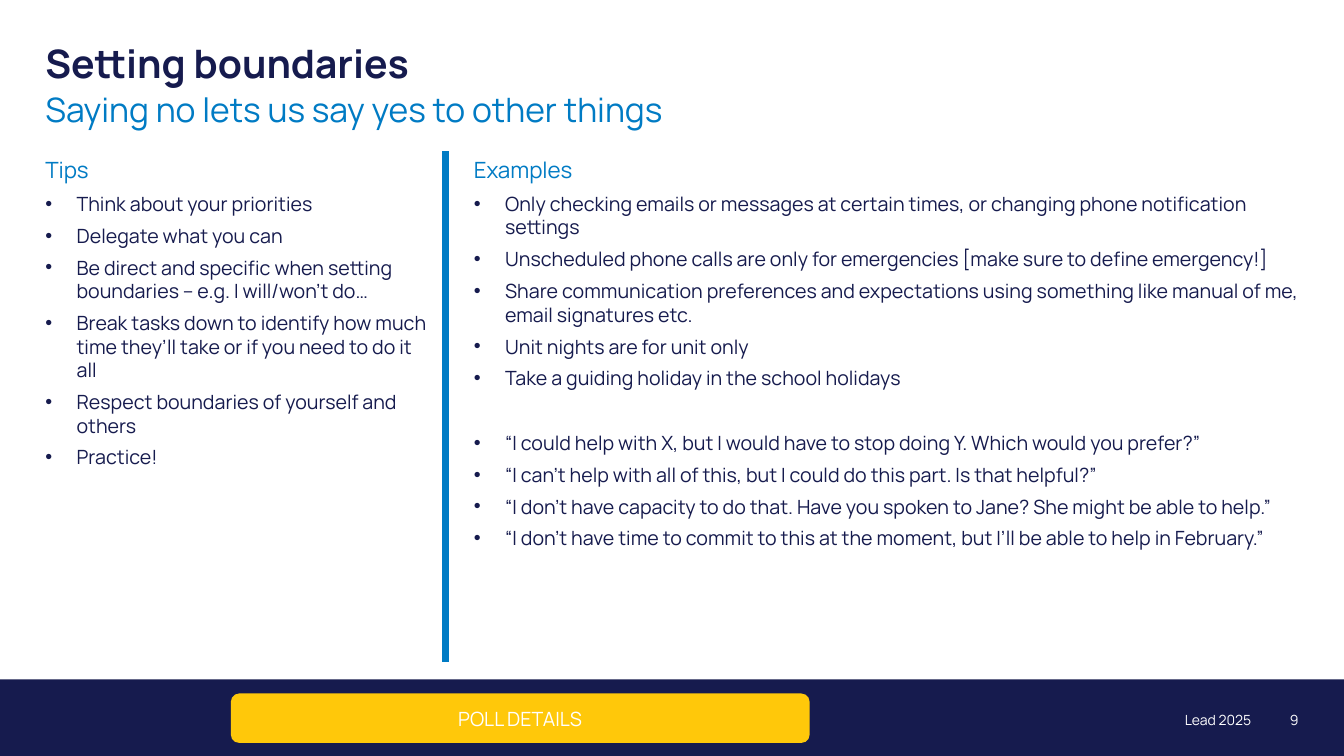
from dataclasses import dataclass

from lxml.etree import SubElement
from pptx import Presentation
from pptx.dml.color import RGBColor
from pptx.enum.shapes import MSO_CONNECTOR, MSO_SHAPE
from pptx.enum.text import MSO_ANCHOR, MSO_AUTO_SIZE, PP_ALIGN
from pptx.oxml.ns import qn
from pptx.util import Pt

EMU_PER_PX = 9144


def px(length):
    return length * EMU_PER_PX


@dataclass(frozen=True)
class Theme:
    font: str = "Manrope"
    navy: str = "161B4E"
    blue: str = "007BC4"
    yellow: str = "FFC80A"
    white: str = "FFFFFF"
    title: int = 28
    subtitle: int = 24
    heading: int = 16
    body: int = 14
    footer: int = 10
    paragraph_gap: int = 6
    group_gap: int = 23
    bullet_indent: int = 31
    rule_width: float = 4.5


class SlideBuilder:
    def __init__(self, deck, theme):
        self.theme = theme
        self.slide = deck.slides.add_slide(deck.slide_layouts[5])

    def apply(self, target, values):
        for name, value in values.items():
            setattr(target, name, value)

    def frame(self, shape, anchor=MSO_ANCHOR.TOP):
        self.apply(shape.text_frame, {
            "word_wrap": True,
            "auto_size": MSO_AUTO_SIZE.NONE,
            "vertical_anchor": anchor,
            "margin_left": 0,
            "margin_top": 0,
            "margin_right": 0,
            "margin_bottom": 0,
        })
        return shape.text_frame

    def fill_para(self, para, text, size, color, bold=False, **layout):
        self.apply(para, {"alignment": PP_ALIGN.LEFT, **layout})
        span = para.add_run()
        span.text = text
        self.apply(span.font, {"name": self.theme.font, "size": Pt(size), "bold": bold})
        span.font.color.rgb = RGBColor.from_string(color)

    def title(self, bounds, text):
        title = self.slide.shapes.title
        self.apply(title, dict(zip(("left", "top", "width", "height"), map(px, bounds))))
        para = self.frame(title).paragraphs[0]
        self.fill_para(para, text, self.theme.title, self.theme.navy, bold=True, line_spacing=0.9)

    def text(self, bounds, text, size, color, anchor=MSO_ANCHOR.TOP, align=PP_ALIGN.LEFT):
        box = self.slide.shapes.add_textbox(*map(px, bounds))
        frame = self.frame(box, anchor)
        self.fill_para(frame.paragraphs[0], text, size, color, alignment=align)
        return frame

    def bullet(self, para):
        properties = para._p.get_or_add_pPr()
        indent = px(self.theme.bullet_indent)
        properties.set("marL", str(indent))
        properties.set("indent", str(-indent))
        SubElement(properties, qn("a:buFont"), typeface="Arial")
        SubElement(properties, qn("a:buChar"), char="•")

    def column(self, bounds, heading, groups):
        theme = self.theme
        frame = self.text(bounds, heading, theme.heading, theme.blue)
        frame.paragraphs[0].space_after = Pt(theme.paragraph_gap)
        for group_number, group in enumerate(groups):
            for item_number, item in enumerate(group):
                para = frame.add_paragraph()
                self.bullet(para)
                starts_group = group_number > 0 and item_number == 0
                self.fill_para(para, item, theme.body, theme.navy,
                               space_before=Pt(theme.group_gap if starts_group else 0),
                               space_after=Pt(theme.paragraph_gap))

    def panel(self, kind, bounds, color, text=None):
        panel = self.slide.shapes.add_shape(kind, *map(px, bounds))
        panel.shadow.inherit = False
        panel.fill.solid()
        panel.fill.fore_color.rgb = RGBColor.from_string(color)
        panel.line.fill.background()
        if text:
            para = self.frame(panel, MSO_ANCHOR.MIDDLE).paragraphs[0]
            self.fill_para(para, text, self.theme.body, self.theme.white,
                           alignment=PP_ALIGN.CENTER)

    def rule(self, *ends):
        rule = self.slide.shapes.add_connector(MSO_CONNECTOR.STRAIGHT, *map(px, ends))
        rule.line.width = Pt(self.theme.rule_width)
        rule.line.color.rgb = RGBColor.from_string(self.theme.blue)
        SubElement(rule._element.spPr, qn("a:effectLst"))


TIPS = [[
    "Think about your priorities",
    "Delegate what you can",
    "Be direct and specific when setting boundaries – e.g. I will/won’t do…",
    "Break tasks down to identify how much time they’ll take or if you need to do it all",
    "Respect boundaries of yourself and others",
    "Practice!",
]]
EXAMPLES = [
    [
        "Only checking emails or messages at certain times, or changing phone notification settings",
        "Unscheduled phone calls are only for emergencies [make sure to define emergency!]",
        "Share communication preferences and expectations using something like manual of me, "
        "email signatures etc.",
        "Unit nights are for unit only",
        "Take a guiding holiday in the school holidays",
    ],
    [
        "“I could help with X, but I would have to stop doing Y. Which would you prefer?”",
        "“I can’t help with all of this, but I could do this part. Is that helpful?”",
        "“I don’t have capacity to do that. Have you spoken to Jane? She might be able to help.”",
        "“I don’t have time to commit to this at the moment, but I’ll be able to help in February.”",
    ],
]


def main():
    deck = Presentation()
    deck.slide_width, deck.slide_height = px(1333), px(750)
    theme = Theme()
    page = SlideBuilder(deck, theme)

    page.panel(MSO_SHAPE.RECTANGLE, (0, 674, 1333, 76), theme.navy)
    page.title((45, 44, 1244, 43), "Setting boundaries")
    page.text((45, 88, 1244, 43), "Saying no lets us say yes to other things",
              theme.subtitle, theme.blue)
    page.column((45, 155, 379, 488), "Tips", TIPS)
    page.column((470, 155, 842, 488), "Examples", EXAMPLES)
    page.rule(442, 150, 442, 657)
    for left, width, label in ((667, 574, "Lead 2025"), (1242, 46, "9")):
        page.text((left, 703, width, 23), label, theme.footer, theme.white,
                  MSO_ANCHOR.MIDDLE, PP_ALIGN.RIGHT)
    page.panel(MSO_SHAPE.ROUNDED_RECTANGLE, (229, 688, 574, 49), theme.yellow, "POLL DETAILS")

    deck.save("out.pptx")


if __name__ == "__main__":
    main()
